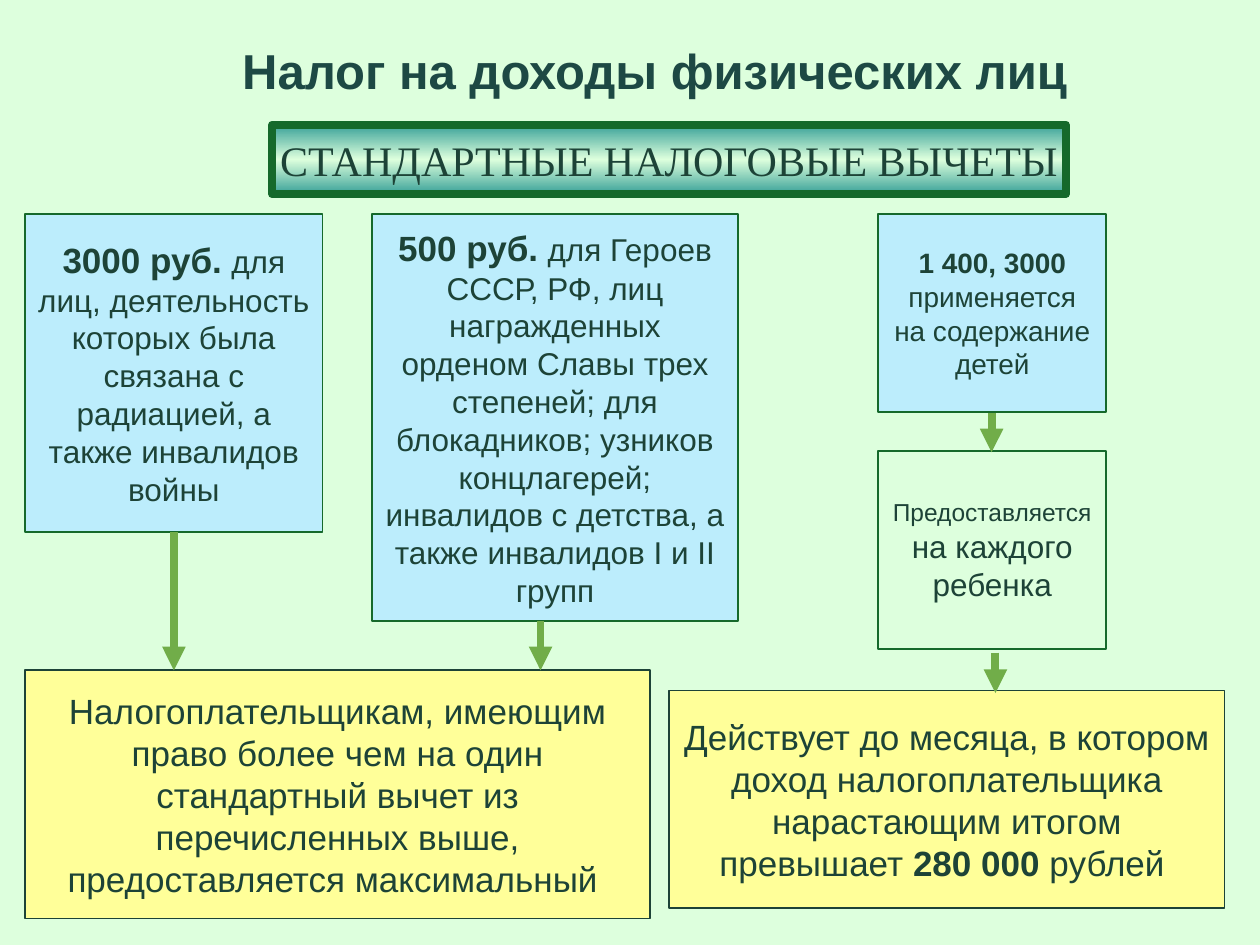
from copy import deepcopy

from lxml import etree
from pptx import Presentation
from pptx.dml.color import RGBColor
from pptx.enum.shapes import MSO_CONNECTOR, MSO_SHAPE
from pptx.enum.text import MSO_ANCHOR, MSO_AUTO_SIZE, PP_ALIGN
from pptx.oxml.ns import qn
from pptx.util import Inches, Pt

RECT = MSO_SHAPE.RECTANGLE
STRAIGHT = MSO_CONNECTOR.STRAIGHT
MIDDLE = MSO_ANCHOR.MIDDLE
CENTER = PP_ALIGN.CENTER
FIXED = MSO_AUTO_SIZE.NONE

MINT = RGBColor(0xDD, 0xFF, 0xDD)
SKY = RGBColor(0xBC, 0xED, 0xFC)
YELLOW = RGBColor(0xFF, 0xFF, 0x99)
TEAL = RGBColor(0x39, 0xA1, 0x98)
GREEN = RGBColor(0x15, 0x69, 0x2B)
LEAF = RGBColor(0x71, 0xAD, 0x49)
INK = RGBColor(0x1D, 0x43, 0x37)
PINE = RGBColor(0x1D, 0x49, 0x44)

WIDTH, HEIGHT = Inches(10), Inches(7.5)
COLS, ROWS = 100, 75
LEFT, TOP = 2, 17


def col(n):
    """Return the length of n grid columns."""
    return round(WIDTH * n / COLS)


def row(n):
    """Return the length of n grid rows."""
    return round(HEIGHT * n / ROWS)


def write(shape, *runs, font="Arial", color=INK, wrap=True):
    """Fill a shape with one centred paragraph of (text, size, bold) runs."""
    frame = shape.text_frame
    frame.auto_size = FIXED
    frame.word_wrap = wrap
    frame.vertical_anchor = MIDDLE
    line = frame.paragraphs[0]
    line.alignment = CENTER
    for text, size, bold in runs:
        run = line.add_run()
        run.text = text
        run.font.name = font
        run.font.size = Pt(size)
        run.font.bold = bold
        run.font.color.rgb = color


def add_box(slide, x, y, w, h, fill=SKY, edge=GREEN, weight=1):
    """Add an outlined rectangle placed on the grid."""
    box = slide.shapes.add_shape(RECT, col(x), row(y), col(w), row(h))
    box.shadow.inherit = False
    box.fill.solid()
    box.fill.fore_color.rgb = fill
    box.line.color.rgb = edge
    box.line.width = Pt(weight)
    return box


def shade(box, *colors):
    """Give a box an upright gradient of evenly spaced colours."""
    box.fill.gradient()
    box.fill.gradient_angle = 90
    stops = box._element.spPr.find(".//" + qn("a:gsLst"))
    while len(stops) < len(colors):
        stops.append(deepcopy(stops[0]))
    for i, (stop, color) in enumerate(zip(box.fill.gradient_stops, colors)):
        stop.color.rgb = color
        stop.position = i / (len(colors) - 1)


def add_arrow(slide, x, top, end):
    """Add a downward arrow on the grid."""
    arrow = slide.shapes.add_connector(STRAIGHT, col(x), row(top), col(x), row(end))
    arrow.line.color.rgb = LEAF
    arrow.line.width = Pt(4.5)
    etree.SubElement(arrow.line._get_or_add_ln(), qn("a:tailEnd"), type="triangle")
    etree.SubElement(arrow._element.spPr, qn("a:effectLst"))


def add_head(slide):
    """Set the title and add the banner under it."""
    title = slide.shapes.title
    title.left, title.top = col(17.7), row(2.8)
    title.width, title.height = col(68.5), row(5.5)
    write(title, ("Налог на доходы физических лиц", 28, True), color=PINE)
    banner = add_box(slide, 21.6, 9.9, 63, 5.5, weight=4.5)
    shade(banner, TEAL, MINT, TEAL)
    write(banner, ("СТАНДАРТНЫЕ НАЛОГОВЫЕ ВЫЧЕТЫ", 24, False),
          font="Times New Roman", wrap=False)


def add_sums(slide):
    """Add the boxes with the deduction sums."""
    write(add_box(slide, LEFT, TOP, 23.6, 25.2),
          ("3000 руб.", 20, True), (" ", 19, False),
          ("для лиц, деятельность которых была связана с радиацией, "
           "а также инвалидов войны", 18, False))
    write(add_box(slide, 29.5, TOP, 29.1, 32.3),
          ("500 руб.", 20, True), (" ", 19, False),
          ("для Героев СССР, РФ, лиц награжденных орденом Славы трех "
           "степеней; для блокадников; узников концлагерей; инвалидов "
           "с детства, а также инвалидов I и II групп", 18, False))
    write(add_box(slide, 69.7, TOP, 18.1, 15.7),
          ("1 400, 3000 ", 16, True),
          ("применяется на содержание детей", 16, False))
    write(add_box(slide, 69.7, 35.8, 18.1, 15.7, fill=MINT),
          ("Предоставляется ", 14, False), ("на каждого ребенка", 18, False))


def add_rules(slide):
    """Add the boxes with the rules of use."""
    write(add_box(slide, 53.1, 54.8, 44.1, 17.3, fill=YELLOW, edge=INK),
          ("Действует до месяца, в котором доход налогоплательщика "
           "нарастающим итогом превышает ", 20, False),
          ("280 000", 20, True), (" рублей ", 20, False))
    write(add_box(slide, LEFT, 53.2, 49.6, 19.7, fill=YELLOW, edge=INK),
          ("Налогоплательщикам, имеющим право более чем на один стандартный "
           "вычет из перечисленных выше, предоставляется максимальный ",
           20, False))


def main():
    """Build and save the slide."""
    deck = Presentation()
    deck.slide_width, deck.slide_height = WIDTH, HEIGHT
    slide = deck.slides.add_slide(deck.slide_layouts[5])
    slide.background.fill.solid()
    slide.background.fill.fore_color.rgb = MINT
    add_head(slide)
    add_sums(slide)
    add_rules(slide)
    for x, top, end in ((79, 51.8, 55), (78.7, 32.8, 35.9),
                        (13.8, 42.2, 53.2), (42.9, 49.3, 53.2)):
        add_arrow(slide, x, top, end)
    deck.save("out.pptx")


if __name__ == "__main__":
    main()
